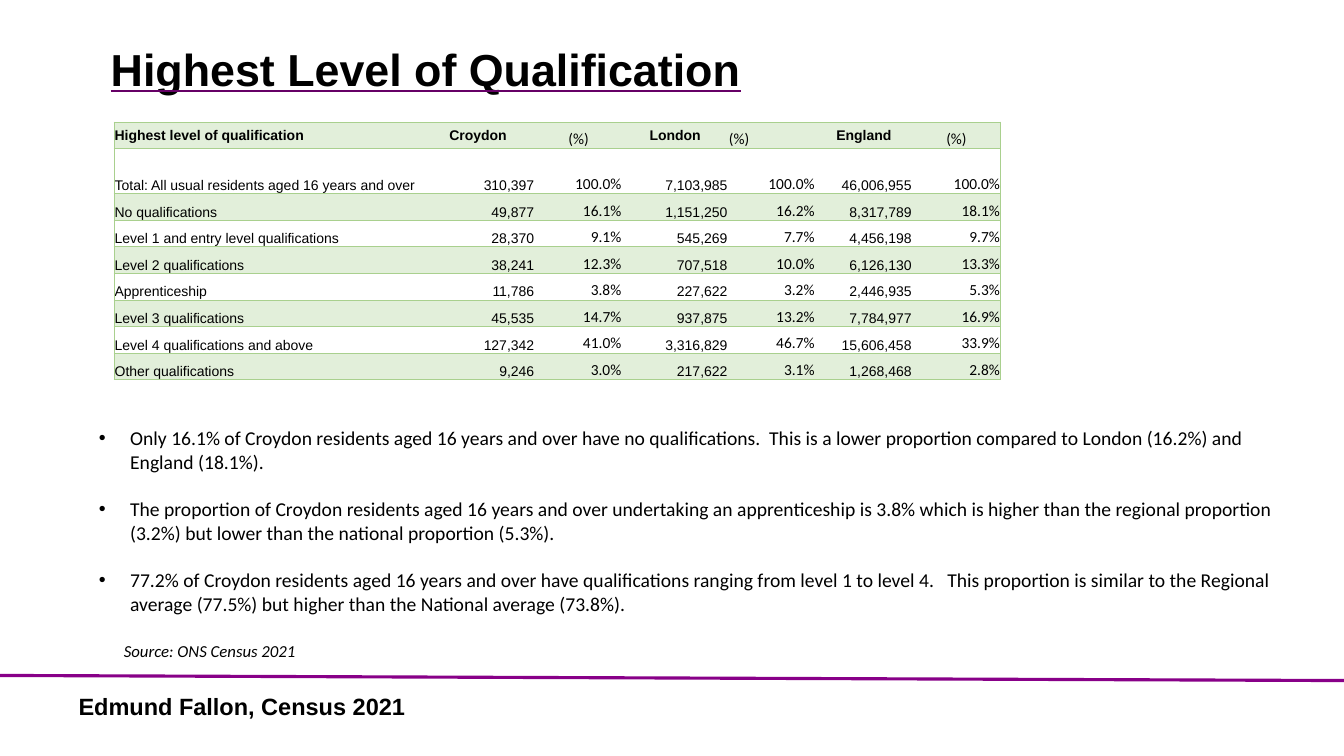
from dataclasses import dataclass

from lxml import etree
from pptx import Presentation
from pptx.dml.color import RGBColor
from pptx.enum.shapes import MSO_CONNECTOR
from pptx.enum.text import MSO_ANCHOR, PP_ALIGN
from pptx.oxml.ns import qn
from pptx.util import Cm, Pt

STRAIGHT = MSO_CONNECTOR.STRAIGHT
TOP, MIDDLE, BOTTOM = MSO_ANCHOR.TOP, MSO_ANCHOR.MIDDLE, MSO_ANCHOR.BOTTOM
LEFT, CENTER, RIGHT = PP_ALIGN.LEFT, PP_ALIGN.CENTER, PP_ALIGN.RIGHT

COLORS = {"text": "000000", "rule": "880088", "underline": "660066",
          "band": "E2EFDA", "grid": "A9D08E"}
SLIDE_W, SLIDE_H = 33.87, 19.05
COL_WIDTHS = [7.74, 2.87, 2.2, 2.67, 2.2, 2.44, 2.23]
ROW_H, TOTAL_ROW_H = 0.67, 1.14
BULLET_INDENT = 0.79


@dataclass
class Style:
    size: float
    font: str = "Calibri"
    bold: bool = False
    italic: bool = False


@dataclass
class Label:
    text: str
    left: float
    top: float
    width: float
    height: float
    style: Style
    anchor: MSO_ANCHOR = TOP
    spacing: float = 1.0


COUNT = Style(10, "Arial")
PERCENT = Style(11)
HEADING = Style(10, "Arial", bold=True)
BODY = Style(14)

TITLE = Label("Highest Level of Qualification", 2.54, 0.64, 29.21, 2.34,
              Style(32, "Arial", bold=True), MIDDLE, 0.9)
SOURCE = Label("Source: ONS Census 2021", 2.87, 16.03, 5.54, 0.76,
               Style(12, italic=True))
FOOTER = Label("Edmund Fallon, Census 2021", 1.73, 17.5, 9.83, 1.19,
               Style(16.8, "Arial", bold=True), spacing=0.7)

HEADER = ["Highest level of qualification", "Croydon", "(%)", "London", "(%)",
          "England", "(%)"]
HEADER_ALIGN = [LEFT, CENTER, CENTER, CENTER, LEFT, CENTER, CENTER]
ROWS = [
    ["Total: All usual residents aged 16 years and over",
     "310,397", "100.0%", "7,103,985", "100.0%", "46,006,955", "100.0%"],
    ["No qualifications",
     "49,877", "16.1%", "1,151,250", "16.2%", "8,317,789", "18.1%"],
    ["Level 1 and entry level qualifications",
     "28,370", "9.1%", "545,269", "7.7%", "4,456,198", "9.7%"],
    ["Level 2 qualifications",
     "38,241", "12.3%", "707,518", "10.0%", "6,126,130", "13.3%"],
    ["Apprenticeship",
     "11,786", "3.8%", "227,622", "3.2%", "2,446,935", "5.3%"],
    ["Level 3 qualifications",
     "45,535", "14.7%", "937,875", "13.2%", "7,784,977", "16.9%"],
    ["Level 4 qualifications and above",
     "127,342", "41.0%", "3,316,829", "46.7%", "15,606,458", "33.9%"],
    ["Other qualifications",
     "9,246", "3.0%", "217,622", "3.1%", "1,268,468", "2.8%"],
]
FINDINGS = [
    "Only 16.1% of Croydon residents aged 16 years and over have no "
    "qualifications.  This is a lower proportion compared to London (16.2%) "
    "and England (18.1%).",
    "The proportion of Croydon residents aged 16 years and over undertaking an "
    "apprenticeship is 3.8% which is higher than the regional proportion "
    "(3.2%) but lower than the national proportion (5.3%).",
    "77.2% of Croydon residents aged 16 years and over have qualifications "
    "ranging from level 1 to level 4.   This proportion is similar to the "
    "Regional average (77.5%) but higher than the National average (73.8%).",
]


def rgb(name: str) -> RGBColor:
    return RGBColor.from_string(COLORS[name])


def add_solid_fill(parent, color: str) -> None:
    fill = etree.SubElement(parent, qn("a:solidFill"))
    etree.SubElement(fill, qn("a:srgbClr"), val=COLORS[color])


def add_run(p, text: str, style: Style):
    r = p.add_run()
    r.text = text
    r.font.size = Pt(style.size)
    r.font.name = style.font
    r.font.bold = style.bold
    r.font.italic = style.italic
    r.font.color.rgb = rgb("text")
    return r


def add_label(slide, label: Label):
    sp = slide.shapes.add_textbox(Cm(label.left), Cm(label.top),
                                  Cm(label.width), Cm(label.height))
    tf = sp.text_frame
    tf.word_wrap = True
    tf.vertical_anchor = label.anchor
    p = tf.paragraphs[0]
    p.line_spacing = label.spacing
    return add_run(p, label.text, label.style)


def underline(r, color: str) -> None:
    """Underline a run in a colour of its own."""
    r.font.underline = True
    u_fill = etree.Element(qn("a:uFill"))
    add_solid_fill(u_fill, color)
    r.font._element.find(qn("a:latin")).addprevious(u_fill)


def add_rule(slide) -> None:
    line = slide.shapes.add_connector(STRAIGHT, Cm(0), Cm(17.02),
                                      Cm(SLIDE_W), Cm(17.15))
    line.line.color.rgb = rgb("rule")
    line.line.width = Pt(2.25)
    etree.SubElement(line._element.spPr, qn("a:effectLst"))


def set_borders(cell, visible: str) -> None:
    """Draw the sides named in visible (L, R, T, B) and hide the others."""
    tc_pr = cell._tc.get_or_add_tcPr()
    for side in "LRTB":
        ln = etree.SubElement(tc_pr, qn(f"a:ln{side}"), w=str(Pt(0.5)))
        if side in visible:
            add_solid_fill(ln, "grid")
        else:
            etree.SubElement(ln, qn("a:noFill"))


def fill_cell(cell, text: str, row: int, col: int) -> None:
    is_percent = col > 0 and col % 2 == 0
    last = len(COL_WIDTHS) - 1
    set_borders(cell, "TB" + {0: "L", last: "R"}.get(col, ""))
    if row % 2 == 0:
        cell.fill.solid()
        cell.fill.fore_color.rgb = rgb("band")
    else:
        cell.fill.background()
    cell.margin_left = cell.margin_right = cell.margin_top = Cm(0.02)
    cell.margin_bottom = Cm(0)
    cell.vertical_anchor = MIDDLE if row == 0 and not is_percent else BOTTOM
    p = cell.text_frame.paragraphs[0]
    if row == 0:
        p.alignment = HEADER_ALIGN[col]
    else:
        p.alignment = RIGHT if col else LEFT
    add_run(p, text, PERCENT if is_percent else COUNT if row else HEADING)


def add_qualifications_table(slide) -> None:
    data = [HEADER] + ROWS
    heights = [TOTAL_ROW_H if i == 1 else ROW_H for i in range(len(data))]
    table = slide.shapes.add_table(len(data), len(COL_WIDTHS), Cm(2.87), Cm(3.07),
                                   Cm(sum(COL_WIDTHS)), Cm(sum(heights))).table
    table.first_row = table.horz_banding = False
    for column, width in zip(table.columns, COL_WIDTHS):
        column.width = Cm(width)
    for i, (values, height) in enumerate(zip(data, heights)):
        table.rows[i].height = Cm(height)
        for j, text in enumerate(values):
            fill_cell(table.cell(i, j), text, i, j)


def add_findings(slide) -> None:
    sp = slide.shapes.add_textbox(Cm(2.24), Cm(10.62), Cm(30.15), Cm(5.05))
    tf = sp.text_frame
    tf.word_wrap = True
    for i, finding in enumerate(FINDINGS):
        p = tf.add_paragraph() if i else tf.paragraphs[0]
        p_pr = p._p.get_or_add_pPr()
        p_pr.set("marL", str(Cm(BULLET_INDENT)))
        p_pr.set("indent", str(-Cm(BULLET_INDENT)))
        etree.SubElement(p_pr, qn("a:buFont"), typeface="Arial")
        etree.SubElement(p_pr, qn("a:buChar"), char="•")
        if i:
            p.space_before = Pt(17)
        add_run(p, finding, BODY)


def main() -> None:
    prs = Presentation()
    prs.slide_width, prs.slide_height = Cm(SLIDE_W), Cm(SLIDE_H)
    slide = prs.slides.add_slide(prs.slide_layouts[6])
    add_rule(slide)
    add_label(slide, FOOTER)
    underline(add_label(slide, TITLE), "underline")
    add_label(slide, SOURCE)
    add_findings(slide)
    add_qualifications_table(slide)
    prs.save("out.pptx")


if __name__ == "__main__":
    main()
